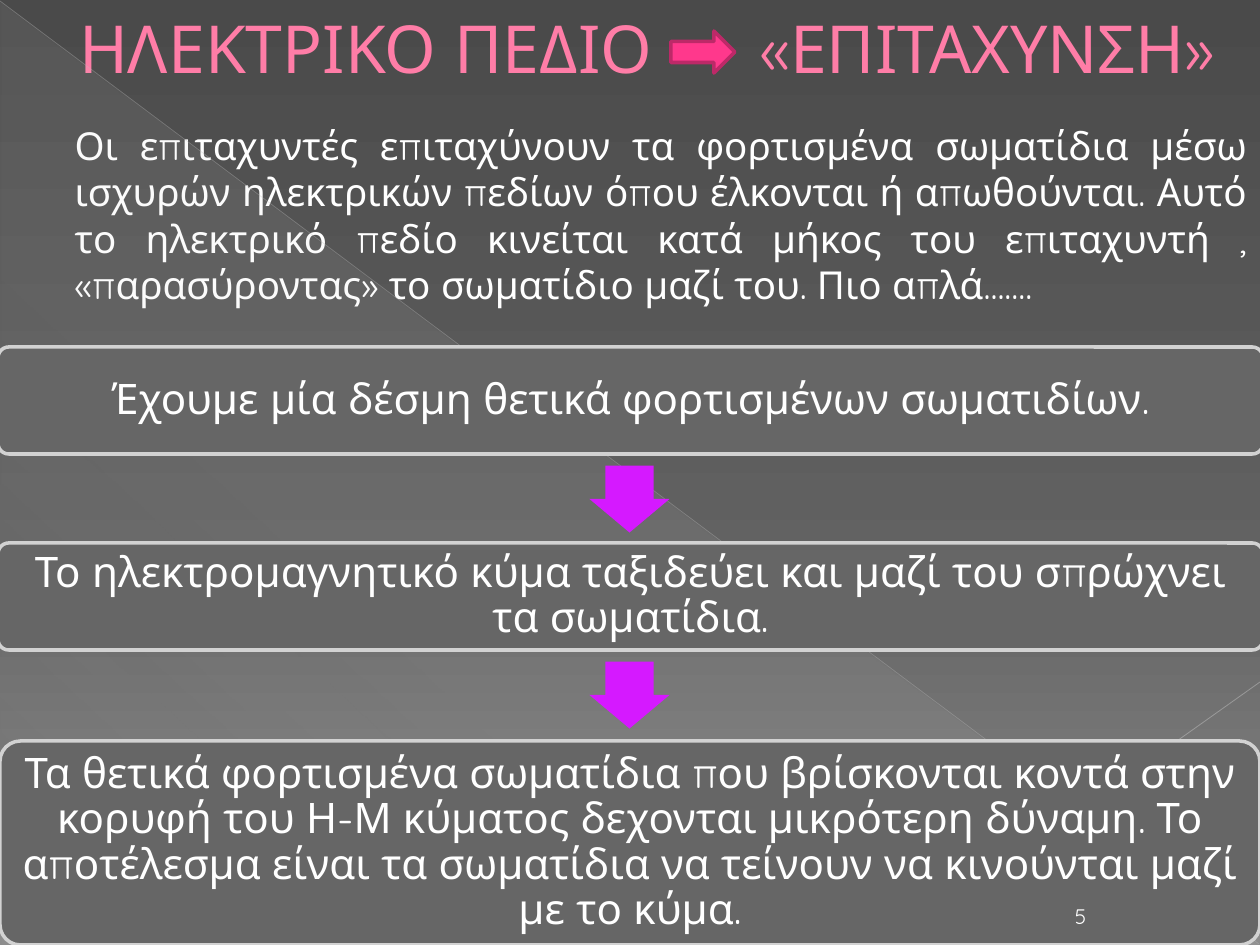
"""Build a slide on how an electric field accelerates charged particles."""
from lxml import etree
from pptx import Presentation
from pptx.dml.color import RGBColor
from pptx.enum.shapes import MSO_CONNECTOR, MSO_SHAPE
from pptx.enum.text import MSO_ANCHOR, MSO_AUTO_SIZE, PP_ALIGN
from pptx.oxml.ns import qn
from pptx.util import Pt

PX = 914400 / 126
FONT = "Quicksand"
WHITE = RGBColor(0xFF, 0xFF, 0xFF)
PINK = RGBColor(0xFF, 0x7D, 0xA7)
ROSE = RGBColor(0xFF, 0x38, 0x8C)
WINE = RGBColor(0xBD, 0x29, 0x68)
VIOLET = RGBColor(0xD5, 0x19, 0xFF)
GRAY = RGBColor(0x66, 0x66, 0x66)
SILVER = RGBColor(0xD2, 0xD2, 0xD2)
ROUND, ARROW = MSO_SHAPE.ROUNDED_RECTANGLE, MSO_SHAPE.RIGHT_ARROW
WEDGE, LINE = MSO_SHAPE.RIGHT_TRIANGLE, MSO_CONNECTOR.STRAIGHT
TOP, MIDDLE, BOTTOM = MSO_ANCHOR.TOP, MSO_ANCHOR.MIDDLE, MSO_ANCHOR.BOTTOM
LEFT, CENTER, JUSTIFY = PP_ALIGN.LEFT, PP_ALIGN.CENTER, PP_ALIGN.JUSTIFY
NO_FIT = MSO_AUTO_SIZE.NONE


def px(*nums):
    return [round(n * PX) for n in nums]


def write(shape, text, size, color, align, anchor):
    frame = shape.text_frame
    frame.word_wrap, frame.auto_size = True, NO_FIT
    frame.vertical_anchor = anchor
    para = frame.paragraphs[0]
    para.alignment = align
    run = para.add_run()
    run.text = text
    run.font.name, run.font.size = FONT, Pt(size)
    run.font.color.rgb = color
    return para


prs = Presentation()
prs.slide_width, prs.slide_height = px(1260, 945)
slide = prs.slides.add_slide(prs.slide_layouts[1])
shapes = slide.shapes
title, body = shapes.title, slide.placeholders[1]

wedge = shapes.add_shape(WEDGE, *px(1, 2, 1258, 943))
wedge.shadow.inherit = False
wedge.line.fill.background()
grads = [
    (slide.background.fill, slide.element, 270,
     [(0, "4A4A4A", 100), (60, "626262", 100), (100, "8C8C8C", 100)]),
    (wedge.fill, wedge.element, 227,
     [(0, "D2D2D2", 10), (70, "D2D2D2", 8), (100, "D2D2D2", 1)]),
]
for fill, root, angle, stops in grads:
    fill.gradient()
    fill.gradient_angle = angle
    group = next(root.iter(qn("a:gsLst")))
    for old in list(group):
        group.remove(old)
    for pos, tone, alpha in stops:
        stop = etree.SubElement(group, qn("a:gs"), pos=str(pos * 1000))
        color = etree.SubElement(stop, qn("a:srgbClr"), val=tone)
        etree.SubElement(color, qn("a:alpha"), val=str(alpha * 1000))

for ends, tone, width, alpha in [
    ((0, 1, 1259, 944), RGBColor(0xBF, 0xBF, 0xBF), 0.39, 35),
    ((1260, 682, 891, 944), RGBColor(0xC6, 0xC6, 0xC6), 0.47, 45),
]:
    line = shapes.add_connector(LINE, *px(*ends))
    line.line.color.rgb, line.line.width = tone, Pt(width)
    color = next(line.element.iter(qn("a:srgbClr")))
    etree.SubElement(color, qn("a:alpha"), val=str(alpha * 1000))
    etree.SubElement(line.element.spPr, qn("a:effectLst"))

title.left, title.top, title.width, title.height = px(0, 0, 1250, 94)
para = write(title, "ΗΛΕΚΤΡΙΚΟ ΠΕΔΙΟ\t«ΕΠΙΤΑΧΥΝΣΗ»", 37.8, PINK, LEFT, MIDDLE)
title.text_frame.margin_left, stop = px(79, 681)
title.text_frame.margin_right = 0
tabs = etree.SubElement(para._p.get_or_add_pPr(), qn("a:tabLst"))
etree.SubElement(tabs, qn("a:tab"), pos=str(stop), algn="l")

body.left, body.top, body.width, body.height = px(0, 116, 1260, 199)
para = write(
    body,
    "Οι επιταχυντές επιταχύνουν τα φορτισμένα σωματίδια μέσω ισχυρών "
    "ηλεκτρικών πεδίων όπου έλκονται ή απωθούνται. Αυτό το ηλεκτρικό πεδίο "
    "κινείται κατά μήκος του επιταχυντή , «παρασύροντας» το σωματίδιο μαζί "
    "του. Πιο απλά.......", 22, WHITE, JUSTIFY, TOP)
props = para._p.get_or_add_pPr()
props.set("marL", str(px(62)[0]))
props.set("indent", "0")
para.space_before = Pt(4)
etree.SubElement(props, qn("a:buNone"))

steps = [
    (-2, 347, 1265, 107, "Έχουμε μία δέσμη θετικά φορτισμένων σωματιδίων."),
    (-2, 543, 1265, 107, "Το ηλεκτρομαγνητικό κύμα ταξιδεύει και μαζί του "
     "σπρώχνει τα σωματίδια."),
    (0, 741, 1260, 204, "Τα θετικά φορτισμένα σωματίδια που βρίσκονται κοντά "
     "στην κορυφή του Η-Μ κύματος δεχονται μικρότερη δύναμη. Το αποτέλεσμα "
     "είναι τα σωματίδια να τείνουν να κινούνται μαζί με το κύμα."),
]
for x, y, w, h, text in steps:
    box = shapes.add_shape(ROUND, *px(x, y, w, h))
    box.shadow.inherit = False
    box.adjustments[0] = 0.1
    box.fill.solid()
    box.fill.fore_color.rgb = GRAY
    box.line.color.rgb, box.line.width = SILVER, Pt(2)
    para = write(box, text, 24, WHITE, CENTER, MIDDLE)
    para.line_spacing = 0.9
    frame = box.text_frame
    frame.margin_left = frame.margin_right = px(12)[0]
    frame.margin_top = frame.margin_bottom = px(12)[0]

for x, y, w, h, turn, head, tone in [
    (596, 459, 67, 80, 90, 0.6, VIOLET),
    (596, 655, 67, 80, 90, 0.6, VIOLET),
    (671, 31, 64, 42, 0, 0.5, ROSE),
]:
    arrow = shapes.add_shape(ARROW, *px(x, y, w, h))
    arrow.shadow.inherit = False
    arrow.rotation = turn
    arrow.adjustments[0] = head
    arrow.fill.solid()
    arrow.fill.fore_color.rgb = tone
    if turn:
        arrow.line.fill.background()
    else:
        arrow.line.color.rgb, arrow.line.width = WINE, Pt(2)

page = shapes.add_textbox(*px(1046, 893, 69, 42))
write(page, "5", 12, WHITE, CENTER, BOTTOM)

prs.save("out.pptx")
